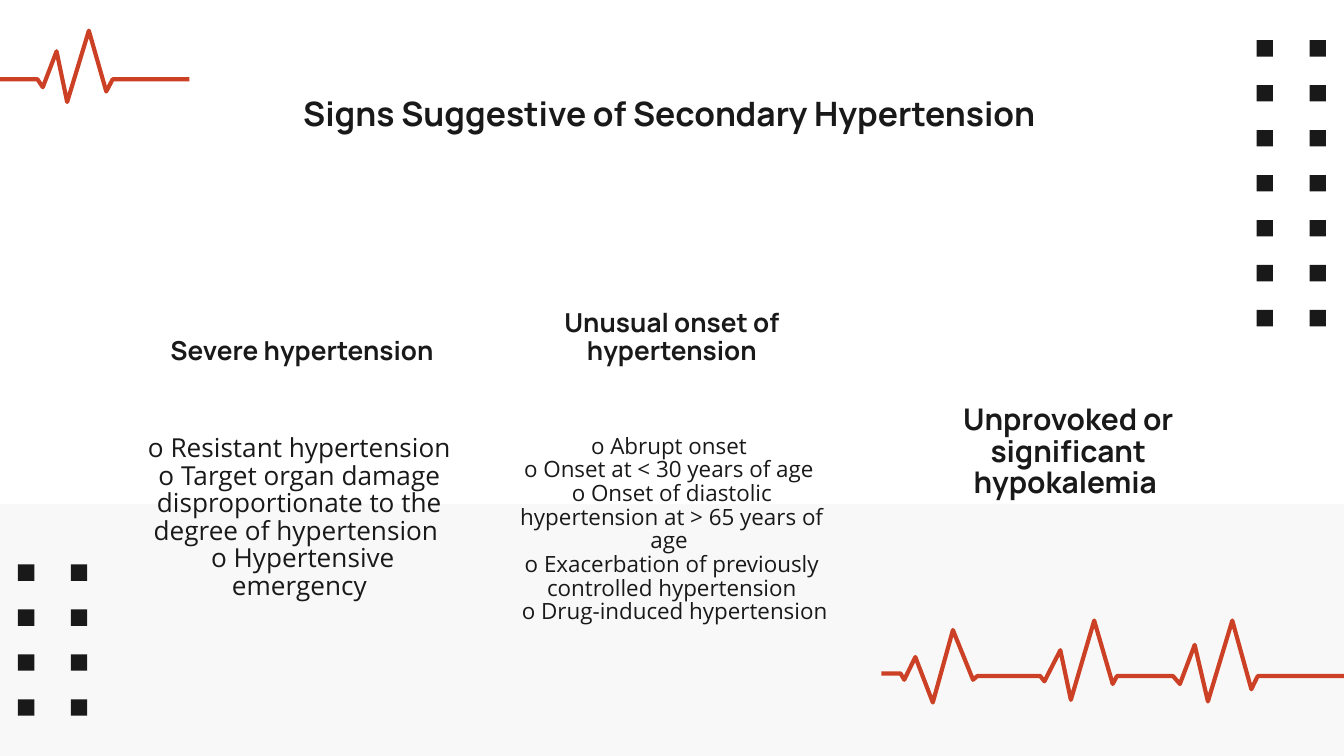
"""Build the slide on signs suggestive of secondary hypertension."""
from dataclasses import dataclass

import pptx
import pptx.dml.color
import pptx.enum.shapes
import pptx.enum.text
import pptx.shapes.autoshape
import pptx.slide
import pptx.util
from pptx.util import Cm

WHITE = pptx.dml.color.RGBColor(0xFF, 0xFF, 0xFF)
PALE_GREY = pptx.dml.color.RGBColor(0xF8, 0xF8, 0xF8)
INK = pptx.dml.color.RGBColor(0x19, 0x19, 0x19)
PULSE_RED = pptx.dml.color.RGBColor(0xCC, 0x41, 0x25)

TOP = pptx.enum.text.MSO_ANCHOR.TOP
BOTTOM = pptx.enum.text.MSO_ANCHOR.BOTTOM
HEADING_FONT = "Manrope"
BODY_FONT = "Open Sans"
SQUARE_SIZE = 0.31
COLUMN_PITCH = 1.0
ROW_PITCH = 0.85


@dataclass(frozen=True)
class TextBlock:
    """A centred text box, measured in centimetres."""
    left: float
    top: float
    width: float
    height: float
    paragraphs: tuple[str, ...]
    size: int
    font: str = HEADING_FONT
    bold: bool = True
    anchor: pptx.enum.text.MSO_ANCHOR = BOTTOM
    spacing: float = 0.88


@dataclass(frozen=True)
class SquareGrid:
    """A two-column grid of small squares."""
    left: float
    top: float
    rows: int


@dataclass(frozen=True)
class PulseLine:
    """A heartbeat trace given by its points."""
    points: tuple[tuple[float, float], ...]


GRIDS = (SquareGrid(0.34, 10.67, 4), SquareGrid(23.75, 0.76, 7))

PULSES = (
    PulseLine((
        (0, 1.5), (0.71, 1.5), (0.81, 1.65), (1.07, 0.97), (1.27, 1.93),
        (1.68, 0.58), (2.01, 1.73), (2.13, 1.5), (3.58, 1.5),
    )),
    PulseLine((
        (16.66, 12.73), (17.02, 12.73), (17.09, 12.85), (17.3, 12.42),
        (17.63, 13.28), (18.01, 11.91), (18.39, 12.85), (18.47, 12.78),
        (19.66, 12.78), (19.74, 12.88), (20.04, 12.29), (20.24, 13.23),
        (20.68, 11.73), (21.03, 12.93), (21.11, 12.78), (22.17, 12.78),
        (22.3, 12.93), (22.58, 12.19), (22.83, 13.26), (23.29, 11.73),
        (23.65, 13.03), (23.77, 12.78), (25.4, 12.78),
    )),
)

BLOCKS = (
    TextBlock(2.41, 5.49, 6.5, 1.68, (" Severe hypertension",), 14),
    TextBlock(9.45, 5.49, 6.5, 1.68, ("Unusual onset of hypertension",), 14),
    TextBlock(17.42, 6.83, 5.54, 2.87,
              ("Unprovoked or significant hypokalemia ",), 16),
    TextBlock(2.01, 1.5, 21.41, 1.6,
              ("Signs Suggestive of Secondary Hypertension ",), 18,
              anchor=TOP, spacing=1.0),
    TextBlock(2.41, 7.98, 6.5, 3.89, (
        "o Resistant hypertension o Target organ damage "
        "disproportionate to the degree of hypertension ",
        " o Hypertensive emergency",
    ), 14, BODY_FONT, False, TOP),
    TextBlock(9.45, 7.98, 6.5, 5.38, (
        "o Abrupt onset ",
        "o Onset at < 30 years of age ",
        "o Onset of diastolic hypertension at > 65 years of age ",
        "o Exacerbation of previously controlled hypertension",
        " o Drug-induced hypertension ",
    ), 12, BODY_FONT, False, TOP),
)


def draw_rectangle(page: pptx.slide.Slide, left: float, top: float,
                   width: float, height: float,
                   color: pptx.dml.color.RGBColor) -> None:
    """Draw a plain filled rectangle."""
    box = page.shapes.add_shape(
        pptx.enum.shapes.MSO_SHAPE.RECTANGLE,
        Cm(left), Cm(top), Cm(width), Cm(height))
    box.shadow.inherit = False
    box.fill.solid()
    box.fill.fore_color.rgb = color
    box.line.fill.background()


def draw_grid(page: pptx.slide.Slide, grid: SquareGrid) -> None:
    """Draw the squares of one grid row by row."""
    for row in range(grid.rows):
        for column in range(2):
            draw_rectangle(page, grid.left + column * COLUMN_PITCH,
                           grid.top + row * ROW_PITCH,
                           SQUARE_SIZE, SQUARE_SIZE, INK)


def draw_pulse(page: pptx.slide.Slide, pulse: PulseLine) -> None:
    """Draw one open heartbeat trace."""
    points = [(Cm(x), Cm(y)) for x, y in pulse.points]
    builder = page.shapes.build_freeform(*points[0])
    builder.add_line_segments(points[1:], close=False)
    trace = builder.convert_to_shape()
    trace.shadow.inherit = False
    trace.fill.background()
    trace.line.color.rgb = PULSE_RED
    trace.line.width = pptx.util.Pt(2.25)


def draw_text(page: pptx.slide.Slide, block: TextBlock) -> None:
    """Draw one centred text block."""
    box = page.shapes.add_textbox(
        Cm(block.left), Cm(block.top), Cm(block.width), Cm(block.height))
    frame = box.text_frame
    frame.word_wrap = True
    frame.vertical_anchor = block.anchor
    frame.margin_left = frame.margin_right = Cm(0.25)
    frame.margin_top = frame.margin_bottom = Cm(0.25)
    frame.text = "\n".join(block.paragraphs)
    for paragraph in frame.paragraphs:
        paragraph.alignment = pptx.enum.text.PP_ALIGN.CENTER
        paragraph.line_spacing = block.spacing
        paragraph.font.name = block.font
        paragraph.font.size = pptx.util.Pt(block.size)
        paragraph.font.bold = block.bold
        paragraph.font.color.rgb = INK


def main() -> None:
    """Assemble and save the deck."""
    deck = pptx.Presentation()
    deck.slide_width, deck.slide_height = Cm(25.4), Cm(14.29)
    page = deck.slides.add_slide(deck.slide_layouts[6])
    page.background.fill.solid()
    page.background.fill.fore_color.rgb = WHITE
    draw_rectangle(page, 0, 9.53, 25.4, 4.76, PALE_GREY)
    for pulse in PULSES:
        draw_pulse(page, pulse)
    for grid in GRIDS:
        draw_grid(page, grid)
    for block in BLOCKS:
        draw_text(page, block)
    deck.save("out.pptx")


if __name__ == "__main__":
    main()
